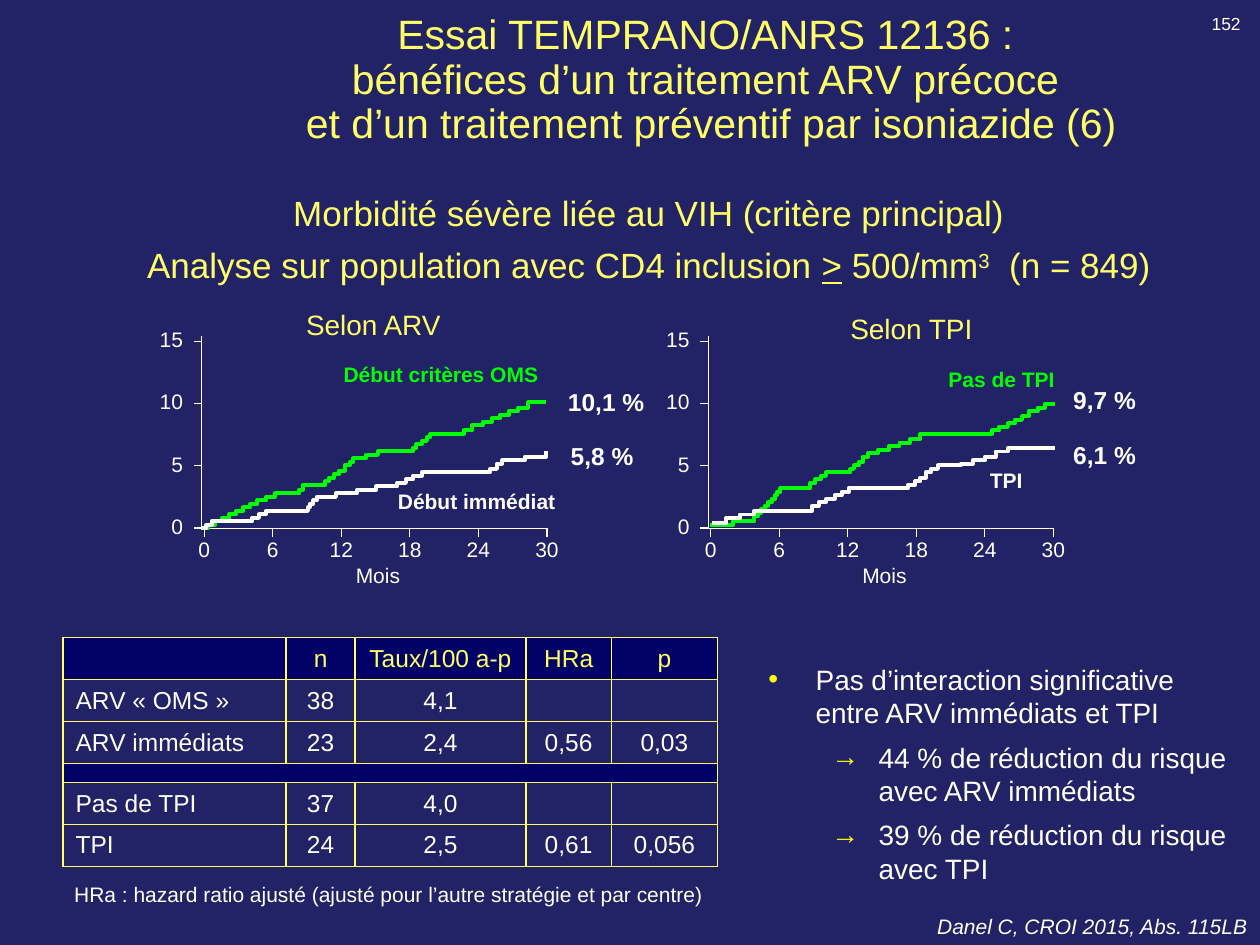
from itertools import pairwise
from lxml import etree
from pptx import Presentation
from pptx import util as u
from pptx.dml.color import RGBColor
from pptx.enum import text
from pptx.oxml import ns

Pt = u.Pt
HUE = {"back": "222267", "head": "000066", "gold": "FFFF66", "mark": "FFFF00",
       "white": "FFFFFF", "green": "00FF00", "black": "000000"}
RGB = {key: RGBColor.from_string(val) for key, val in HUE.items()}
SIDE = {"l": text.PP_ALIGN.LEFT, "c": text.PP_ALIGN.CENTER, "r": text.PP_ALIGN.RIGHT}
SHIFT = {"l": 0, "c": 0.5, "r": 1}
MID = text.MSO_ANCHOR.MIDDLE
A = ns.nsdecls("a")


def put(area, box, paras, size, hue="white", side="l", **fmt):
    """Add text; a box of just (x, top) is sized to its words, with x on the aligned side."""
    if len(box) == 2:
        wide = size * 0.52 * len(paras[0]) + 18
        box = (box[0] - wide * SHIFT[side], box[1], wide, size * 1.2 + 7.2)
    frame = area.add_textbox(*map(Pt, box)).text_frame
    frame.word_wrap = True
    for n, words in enumerate(paras):
        para = frame.paragraphs[0] if n == 0 else frame.add_paragraph()
        para.alignment = SIDE[side]
        for part in [words] if isinstance(words, str) else words:
            run = para.add_run()
            run.text = part
            run.font.color.rgb = RGB[hue]
            for key, val in {"name": "Arial", "size": Pt(size), **fmt}.items():
                setattr(run.font, key, val)
    return frame


def trace(area, dots, hue, width):
    """Draw an open outline through dots given in points."""
    pen = area.build_freeform(*dots[0], scale=Pt(1))
    pen.add_line_segments(dots[1:], close=False)
    shape = pen.convert_to_shape()
    shape.shadow.inherit = False
    shape.fill.background()
    shape.line.color.rgb = RGB[hue]
    shape.line.width = Pt(width)


deck = Presentation()
deck.slide_width, deck.slide_height = Pt(720), Pt(540)
slide = deck.slides.add_slide(deck.slide_layouts[6])
slide.background.fill.solid()
slide.background.fill.fore_color.rgb = RGB["back"]
root = slide.shapes

# Title with a hard text shadow
title = put(root, (110, 9.4, 592.6, 73.4), [
    "Essai TEMPRANO/ANRS 12136 : ", "bénéfices d’un traitement ARV précoce ",
    "et d’un traitement préventif par isoniazide (6)"], 23.4, "gold", "c")
title.vertical_anchor = MID
for para in title.paragraphs:
    para.line_spacing = 0.9
    fill = para.runs[0].font.fill._xPr.find(ns.qn("a:solidFill"))
    fill.addnext(etree.fromstring(
        f'<a:effectLst {A}><a:outerShdw dist="35921" dir="2700000">'
        f'<a:srgbClr val="{HUE["black"]}"/></a:outerShdw></a:effectLst>'))

# Subtitle
body = put(root, (36, 105.8, 669.6, 72), [
    "Morbidité sévère liée au VIH (critère principal)",
    ["Analyse sur population avec CD4 inclusion ", ">", " 500/mm", "3", "  (n = 849)"]],
    20, "gold", "c")
runs = body.paragraphs[1].runs
runs[1].font.underline = True
runs[3].font._element.set("baseline", "30000")
for para in body.paragraphs:
    para.space_before = Pt(6)

put(root, (720, 518.4), ["Danel C, CROI 2015, Abs. 115LB"], 12, side="r", italic=True)
put(root, (35.3, 500.4, 378, 21.6),
    ["HRa : hazard ratio ajusté (ajusté pour l’autre stratégie et par centre)"], 12)
put(root, (716, 3.6), ["152"], 10, side="r")

# Results table
rows = [["", "n", "Taux/100 a-p", "HRa", "p"],
        ["ARV « OMS »", "38", "4,1", "", ""],
        ["ARV immédiats", "23", "2,4", "0,56", "0,03"],
        [""] * 5,
        ["Pas de TPI", "37", "4,0", "", ""],
        ["TPI", "24", "2,5", "0,61", "0,056"]]
wide = [127.5, 39.5, 97.5, 49, 60.5]
high = [24 if any(row) else 10.8 for row in rows]
table = root.add_table(len(rows), len(wide), Pt(36), Pt(364.4), Pt(sum(wide)), Pt(sum(high))).table
table.first_row = table.horz_banding = False
for col, size in zip(table.columns, wide):
    col.width = Pt(size)
for row, size in zip(table.rows, high):
    row.height = Pt(size)
for r, row in enumerate(rows):
    for c, words in enumerate(row):
        cell = table.cell(r, c)
        cell.vertical_anchor = MID
        cell.margin_top = cell.margin_bottom = 0
        props = cell._tc.get_or_add_tcPr()
        for edge in "LRTB":
            props.append(etree.fromstring(
                f'<a:ln{edge} {A} w="12700"><a:solidFill><a:srgbClr val="{HUE["gold"]}"/>'
                f'</a:solidFill></a:ln{edge}>'))
        if r == 0 or not any(row):
            cell.fill.solid()
            cell.fill.fore_color.rgb = RGB["head"]
        else:
            cell.fill.background()
        para = cell.text_frame.paragraphs[0]
        para.alignment = SIDE["c" if c else "l"]
        if words:
            run = para.add_run()
            run.text = words
            run.font.name, run.font.size = "Arial", Pt(14)
            run.font.color.rgb = RGB["white" if r else "gold"]
        else:
            etree.SubElement(para._p, ns.qn("a:endParaRPr"), sz="400")
table.cell(3, 0).merge(table.cell(3, 4))

# Conclusions
notes = ["Pas d’interaction significative entre ARV immédiats et TPI",
         "44 % de réduction du risque avec ARV immédiats",
         "39 % de réduction du risque avec TPI"]
frame = put(root, (432, 375, 277.2, 125.3), notes, 16)
for n, para in enumerate(frame.paragraphs):
    para.level = min(n, 1)
    para.space_before = Pt(6)
    props = para._p.get_or_add_pPr()
    props.set("marL", str(Pt(27 + 36 * para.level)))
    props.set("indent", str(-Pt(27)))
    for part in (f'<a:buClr {A}><a:srgbClr val="{HUE["mark"]}"/></a:buClr>',
                 f'<a:buFont {A} typeface="Arial"/>', f'<a:buChar {A} char="{"•→"[para.level]}"/>'):
        props.append(etree.fromstring(part))

# Survival panels: curve knots are offsets from the axis corner, in steps of 0.72 pt
panels = [
    ("Selon TPI", 404.6, (478.8, 174.2), [
        (201.6, 216.7, "9,7 %", "white"), (201.6, 247.7, "6,1 %", "white"),
        (130.3, 206, "Pas de TPI", "green"), (154, 263.5, "TPI", "white")],
     {"green": [(2, 2), (37, 9), (58, 32), (77, 32), (94, 44), (109, 44), (127, 59),
                (169, 74), (220, 74), (267, 98), (275, 98)],
      "white": [(4, 4), (36, 14), (76, 14), (112, 32), (155, 32), (182, 49),
                (201, 51), (238, 63), (275, 63)]}),
    ("Selon ARV", 115.2, (167.8, 172), [
        (202.3, 217.4, "10,1 %", "white"), (203.8, 248.4, "5,8 %", "white"),
        (74, 203, "Début critères OMS", "green"), (105.1, 275.8, "Début immédiat", "white")],
     {"green": [(0, 0), (11, 5), (38, 19), (58, 27), (76, 27), (80, 34), (94, 34),
                (121, 55), (140, 60), (164, 60), (182, 75), (201, 75), (259, 99), (274, 99)],
      "white": [(0, 0), (8, 5), (35, 5), (51, 13), (82, 13), (91, 24), (155, 36),
                (175, 44), (224, 44), (239, 54), (274, 60)]})]
base = 301.7
for name, left, spot, labels, curves in panels:
    put(root, spot, [name], 16, "gold")
    area = root.add_group_shape().shapes
    trace(area, [(left + 197.3, base), (left, base), (left, base - 110)], "white", 0.75)
    across = [left + 1.5 + 39.17 * k for k in range(6)]
    up = [base - 35.5 * k for k in range(4)]
    ticks = [(x, base, x, base + 5) for x in across] + [(left, y, left - 4.5, y) for y in up]
    for tick in ticks:
        line = area.add_connector(1, *map(Pt, tick))
        line.line.color.rgb = RGB["white"]
        line.line.width = Pt(0.75)
        etree.SubElement(line._element.spPr, ns.qn("a:effectLst"))
    for k, x in enumerate(across):
        put(area, (x, base + 1.5), [str(6 * k)], 12, side="c")
    for k, y in enumerate(up):
        put(area, (left - 3.5, y - 12), [str(5 * k)], 12, side="r")
    put(area, (left + 100.8, base + 16), ["Mois"], 12, side="c")
    for x, top, words, hue in labels:
        put(area, (left + x, top), [words], 14 if "%" in words else 12, hue, bold=True)
    for hue, knots in curves.items():
        stairs = [knots[0]]
        for (x, y), (far, peak) in pairwise(knots):
            count = max(1, round((peak - y) / 3))
            for k in range(1, count + 1):
                turn = x + (far - x) * k / count
                stairs += [(turn, stairs[-1][1]), (turn, y + (peak - y) * k / count)]
        trace(area, [(left + 0.72 * x, base - 0.72 * y) for x, y in stairs], hue, 2.25)

deck.save("out.pptx")
